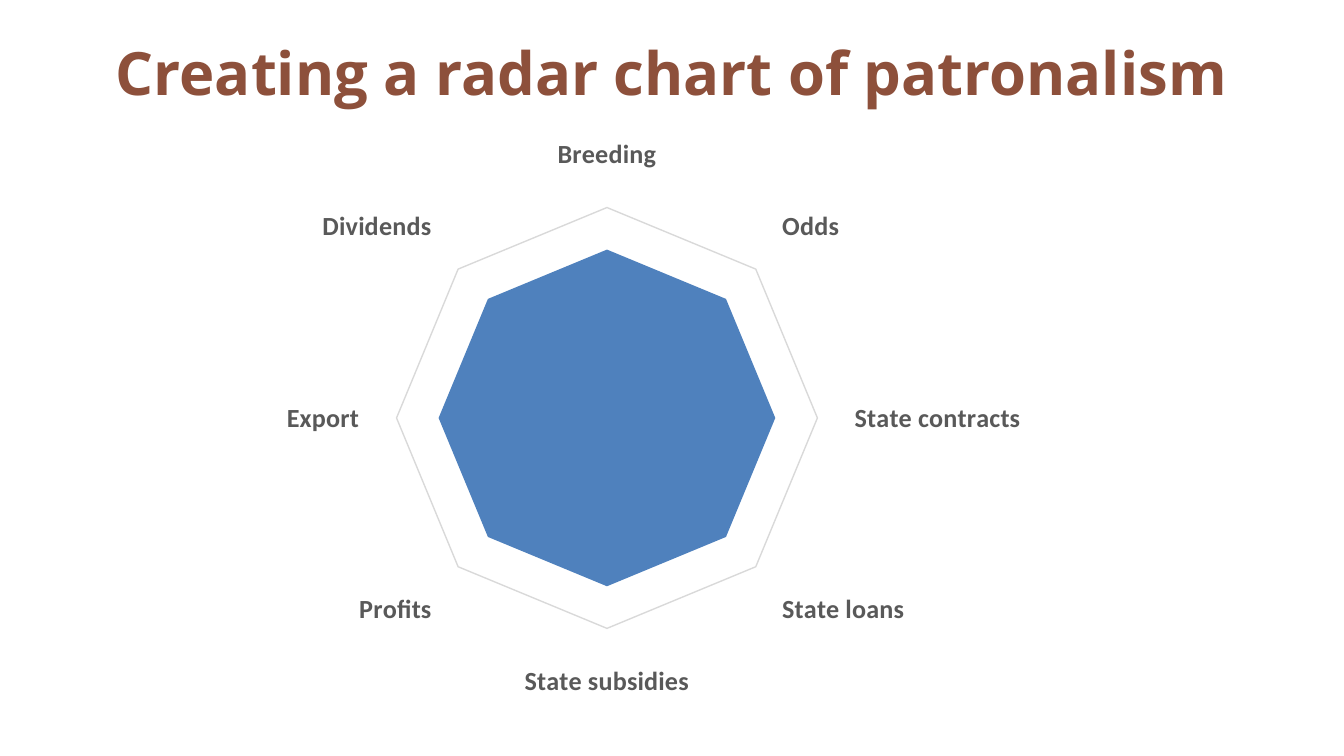
from dataclasses import dataclass

from pptx import Presentation
from pptx.chart.data import CategoryChartData
from pptx.dml.color import RGBColor
from pptx.enum.chart import XL_CHART_TYPE, XL_TICK_MARK
from pptx.enum.text import MSO_ANCHOR, PP_ALIGN
from pptx.slide import Slide
from pptx.util import Inches, Pt

COLORS = {"title": "8D503B", "area": "4F81BD", "label": "595959",
          "grid": "D9D9D9", "text": "000000"}
TRAITS = ["Breeding", "Odds", "State contracts", "State loans",
          "State subsidies", "Profits", "Export", "Dividends"]
SCORE = 100
LIMIT = 125


@dataclass
class Box:
    left: float
    top: float
    width: float
    height: float

    def spans(self) -> list:
        return [Inches(n) for n in (self.left, self.top, self.width, self.height)]


def style(font, name: str, size: int, color: str, bold: bool) -> None:
    font.name, font.size, font.bold = name, Pt(size), bold
    font.color.rgb = RGBColor.from_string(COLORS[color])


def rule(line) -> None:
    """Give a chart line the thin grid look."""
    line.color.rgb = RGBColor.from_string(COLORS["grid"])
    line.width = Pt(0.75)


def add_title(slide: Slide, text: str, box: Box) -> None:
    title = slide.shapes.title
    title.left, title.top, title.width, title.height = box.spans()
    frame = title.text_frame
    frame.text = text
    frame.word_wrap = True
    frame.vertical_anchor = MSO_ANCHOR.MIDDLE
    para = frame.paragraphs[0]
    para.alignment = PP_ALIGN.CENTER
    para.line_spacing = 0.9
    style(para.font, "Open Sans", 32, "title", True)


def add_radar(slide: Slide, box: Box) -> None:
    data = CategoryChartData()
    data.categories = TRAITS
    data.add_series("Series 1", [SCORE] * len(TRAITS))
    chart = slide.shapes.add_chart(
        XL_CHART_TYPE.RADAR_FILLED, *box.spans(), data).chart
    chart.has_title = False
    chart.has_legend = False
    style(chart.font, "Calibri", 10, "text", False)

    plot = chart.plots[0]
    plot.vary_by_categories = False
    area = plot.series[0].format
    area.fill.solid()
    area.fill.fore_color.rgb = RGBColor.from_string(COLORS["area"])
    area.line.fill.background()

    names = chart.category_axis
    names.has_major_gridlines = False
    names.major_tick_mark = names.minor_tick_mark = XL_TICK_MARK.NONE
    style(names.tick_labels.font, "Calibri", 14, "label", True)
    rule(names.format.line)

    scale = chart.value_axis
    scale.minimum_scale, scale.maximum_scale = 0, LIMIT
    scale.major_unit = LIMIT
    scale.has_major_gridlines = True
    rule(scale.major_gridlines.format.line)
    scale.visible = False


def main() -> None:
    deck = Presentation()
    deck.slide_width = Inches(10)
    deck.slide_height = deck.slide_width * 9 // 16
    slide = deck.slides.add_slide(deck.slide_layouts[5])
    add_title(slide, "Creating a radar chart of patronalism",
              Box(0.5, 0.22, 9, 0.7))
    add_radar(slide, Box(1.61, 0.94, 6.51, 4.34))
    deck.save("out.pptx")


if __name__ == "__main__":
    main()
